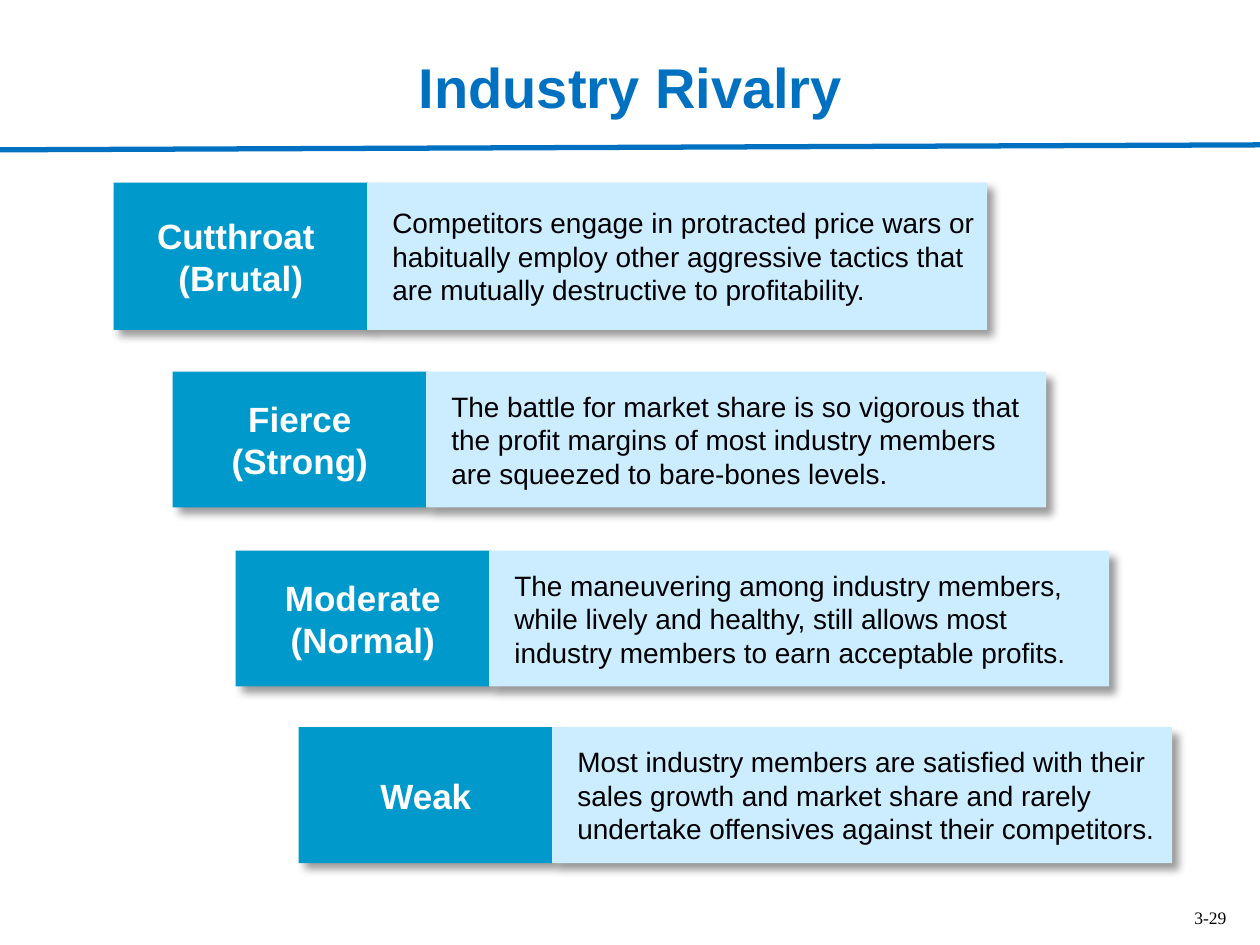
from lxml import etree
from pptx import Presentation
from pptx.dml.color import RGBColor
from pptx.enum.shapes import MSO_CONNECTOR, MSO_SHAPE
from pptx.enum.text import MSO_ANCHOR as ANCHOR, PP_ALIGN as ALIGN
from pptx.oxml import parse_xml
from pptx.oxml.ns import nsdecls, qn
from pptx.util import Cm, Pt

BLUE = RGBColor(0x00, 0x70, 0xC0)
LABEL_FILL = RGBColor(0x00, 0x99, 0xCC)
DETAIL_FILL = RGBColor(0xCC, 0xEC, 0xFF)
WHITE = RGBColor(0xFF, 0xFF, 0xFF)
BLACK = RGBColor(0x00, 0x00, 0x00)

TITLE = "Industry Rivalry"
PAGE_NUMBER = "3-29"

# left, top, height (cm), label, description
LEVELS = [
    (2.29, 3.68, 2.97, "Cutthroat \n(Brutal)",
     "Competitors engage in protracted price wars or habitually employ other "
     "aggressive tactics that are mutually destructive to profitability."),
    (3.48, 7.49, 2.74, "Fierce\n(Strong)",
     "The battle for market share is so vigorous that the profit margins of "
     "most industry members are squeezed to bare-bones levels."),
    (4.75, 11.1, 2.74, "Moderate\n(Normal)",
     "The maneuvering among industry members, while lively and healthy, still "
     "allows most industry members to earn acceptable profits."),
    (6.02, 14.66, 2.74, "Weak",
     "Most industry members are satisfied with their sales growth and market "
     "share and rarely undertake offensives against their competitors."),
]
LABEL_WIDTH, DETAIL_OFFSET, DETAIL_WIDTH = 5.13, 5.11, 12.5

SHADOW = (
    f'<a:effectLst {nsdecls("a")}><a:outerShdw blurRad="{Pt(5)}" dist="{Pt(5)}" '
    'dir="2700000" algn="tl" rotWithShape="0"><a:srgbClr val="000000">'
    '<a:alpha val="40000"/></a:srgbClr></a:outerShdw></a:effectLst>')


def write(shape, text, size, color, align, anchor, bold=False, font="Arial"):
    frame = shape.text_frame
    frame.word_wrap = True
    frame.vertical_anchor = anchor
    paragraph = frame.paragraphs[0]
    paragraph.text = text
    paragraph.alignment = align
    paragraph.font.name = font
    paragraph.font.size = Pt(size)
    paragraph.font.bold = bold
    paragraph.font.color.rgb = color


def add_panel(slide, left, top, width, height, fill):
    """Add a borderless rectangle with a soft shadow to the lower right."""
    panel = slide.shapes.add_shape(
        MSO_SHAPE.RECTANGLE, Cm(left), Cm(top), Cm(width), Cm(height))
    panel.fill.solid()
    panel.fill.fore_color.rgb = fill
    panel.line.fill.background()
    panel._element.spPr.append(parse_xml(SHADOW))
    return panel


def main():
    presentation = Presentation()
    presentation.slide_width, presentation.slide_height = Cm(25.4), Cm(19.05)
    slide = presentation.slides.add_slide(presentation.slide_layouts[6])

    rule = slide.shapes.add_connector(
        MSO_CONNECTOR.STRAIGHT, 0, Cm(3.02), Cm(25.4), Cm(2.92))
    rule.line.color.rgb = BLUE
    rule.line.width = Pt(3)
    etree.SubElement(rule._element.spPr, qn("a:effectLst"))

    number = slide.shapes.add_textbox(Cm(18.87), Cm(17.86), Cm(6.1), Cm(0.97))
    write(number, PAGE_NUMBER, 10, BLACK, ALIGN.RIGHT, ANCHOR.BOTTOM,
          font="Times New Roman")
    title = slide.shapes.add_textbox(Cm(1.5), Cm(0.94), Cm(22.43), Cm(1.6))
    write(title, TITLE, 32, BLUE, ALIGN.CENTER, ANCHOR.TOP, bold=True)

    for left, top, height, name, description in LEVELS:
        label = add_panel(slide, left, top, LABEL_WIDTH, height, LABEL_FILL)
        write(label, name, 20, WHITE, ALIGN.CENTER, ANCHOR.MIDDLE, bold=True)
        detail = add_panel(slide, left + DETAIL_OFFSET, top, DETAIL_WIDTH,
                           height, DETAIL_FILL)
        detail.text_frame.margin_left = Cm(0.51)
        write(detail, description, 16, BLACK, ALIGN.LEFT, ANCHOR.MIDDLE)

    presentation.save("out.pptx")


if __name__ == "__main__":
    main()
